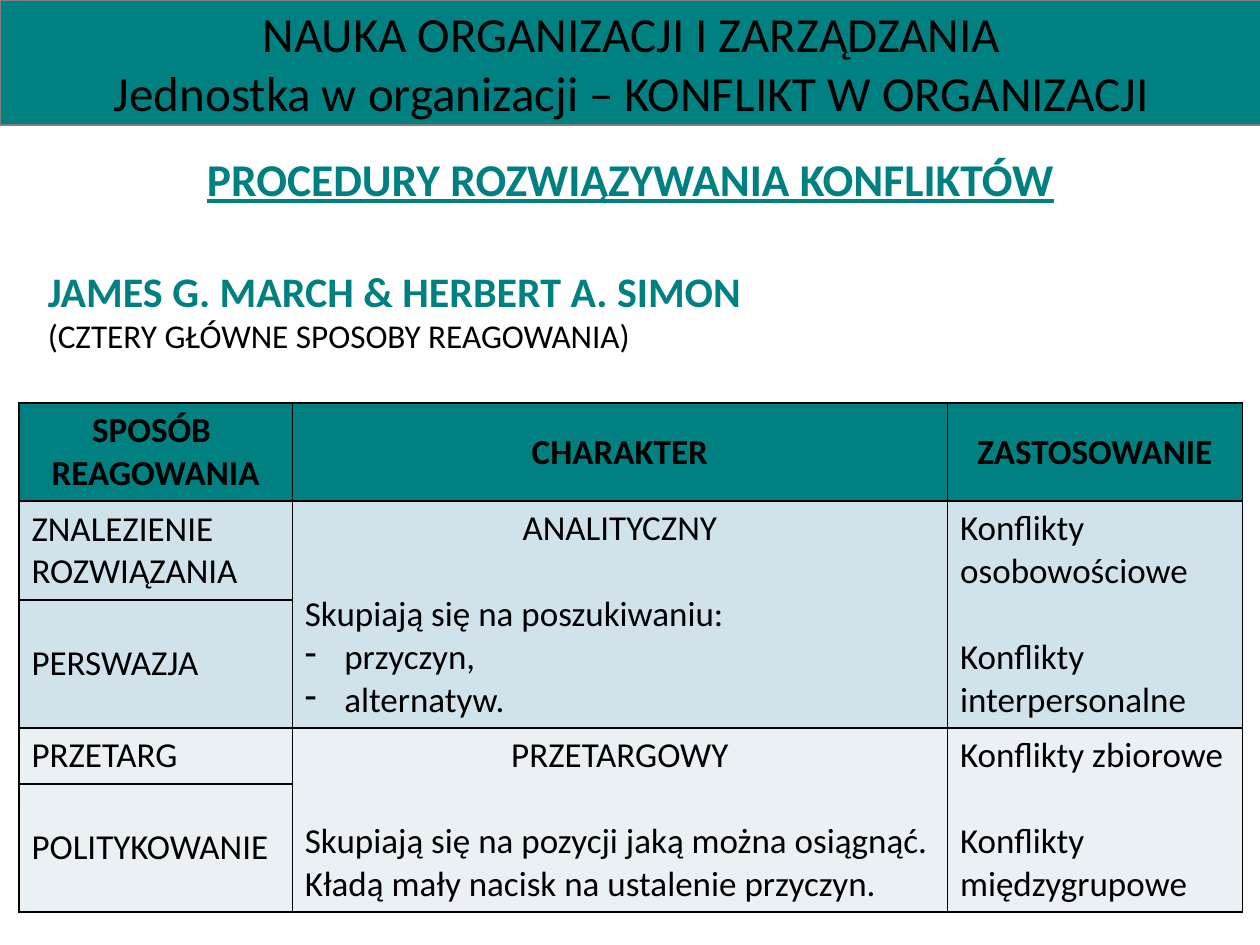
import pptx
import pptx.dml.color
import pptx.enum.shapes
import pptx.enum.text
import pptx.oxml
import pptx.oxml.ns
import pptx.util

Pt = pptx.util.Pt
RGBColor = pptx.dml.color.RGBColor
ALIGN = pptx.enum.text.PP_ALIGN
ANCHOR = pptx.enum.text.MSO_ANCHOR

TEAL = RGBColor(0x00, 0x80, 0x80)
GRAY = RGBColor(0x80, 0x80, 0x80)
BLACK = RGBColor(0x00, 0x00, 0x00)
BLUE_TINT = RGBColor(0xD0, 0xE3, 0xEA)
PALE_TINT = RGBColor(0xE9, 0xF1, 0xF5)

FONT_NAME = "Calibri"
TITLE = {"size": Pt(28)}
HEADING = {"size": Pt(26), "bold": True, "underline": True}
AUTHORS = {"size": Pt(24), "bold": True}
SUBTITLE = {"size": Pt(19)}
TABLE_HEADER = {"size": Pt(20), "bold": True}
TABLE_BODY = {"size": Pt(20), "bold": False}

CENTER = {"alignment": ALIGN.CENTER}
LEFT = {"alignment": ALIGN.LEFT}
LINE_GAP = {"space_after": Pt(24.4)}
CENTER_GAP = {**CENTER, **LINE_GAP}
LEFT_GAP = {**LEFT, **LINE_GAP}

COLUMN_WIDTHS = (156.24, 374.4, 168.48)
ROW_HEIGHTS = (56, 56.4, 73.2, 32, 73.2)


def apply_format(target, values):
    for name, value in values.items():
        setattr(target, name, value)


def write_paragraphs(text_frame, lines, font_format):
    """Write (text, paragraph format) pairs, with an optional own font format."""
    for index, (text, layout, *own_format) in enumerate(lines):
        paragraph = text_frame.paragraphs[0] if index == 0 else text_frame.add_paragraph()
        apply_format(paragraph, layout)
        run = paragraph.add_run()
        run.text = text
        values = {"name": FONT_NAME, **font_format}
        color = BLACK
        if own_format:
            values.update(own_format[0])
            color = own_format[1]
        apply_format(run.font, values)
        run.font.color.rgb = color


def add_title_band(slide):
    shape = slide.shapes.add_shape(
        pptx.enum.shapes.MSO_SHAPE.RECTANGLE, Pt(0), Pt(0), Pt(721.5), Pt(71.5))
    shape.shadow.inherit = False
    shape.fill.solid()
    shape.fill.fore_color.rgb = TEAL
    shape.line.color.rgb = GRAY
    shape.line.width = Pt(0.75)
    apply_format(shape.text_frame, {"word_wrap": True, "vertical_anchor": ANCHOR.MIDDLE})
    write_paragraphs(shape.text_frame, [
        ("NAUKA ORGANIZACJI I ZARZĄDZANIA", CENTER),
        ("Jednostka w organizacji – KONFLIKT W ORGANIZACJI", CENTER),
    ], TITLE)


def add_introduction(slide):
    box = slide.shapes.add_textbox(Pt(20.2), Pt(82.8), Pt(680.4), Pt(130.3))
    box.text_frame.word_wrap = True
    write_paragraphs(box.text_frame, [
        ("PROCEDURY ROZWIĄZYWANIA KONFLIKTÓW", {**CENTER, "space_after": Pt(34)}, HEADING, TEAL),
        ("JAMES G. MARCH & HERBERT A. SIMON", LEFT, AUTHORS, TEAL),
        ("(CZTERY GŁÓWNE SPOSOBY REAGOWANIA)", LEFT),
    ], SUBTITLE)


def set_borders(cell):
    properties = cell._tc.get_or_add_tcPr()
    for index, side in enumerate(("lnL", "lnR", "lnT", "lnB")):
        properties.insert(index, pptx.oxml.parse_xml(
            f'<a:{side} {pptx.oxml.ns.nsdecls("a")} w="{Pt(1)}">'
            f'<a:solidFill><a:srgbClr val="{BLACK}"/></a:solidFill></a:{side}>'))


def add_dash_bullet(paragraph):
    properties = paragraph._p.get_or_add_pPr()
    apply_format_values = {"marL": Pt(22.5), "indent": -Pt(22.5)}
    for name, value in apply_format_values.items():
        properties.set(name, str(value))
    properties.append(pptx.oxml.parse_xml(
        f'<a:buChar {pptx.oxml.ns.nsdecls("a")} char="-"/>'))


def fill_cell(cell, lines, font_format, anchor):
    cell.vertical_anchor = anchor
    write_paragraphs(cell.text_frame, lines, font_format)


def add_reaction_table(slide):
    table = slide.shapes.add_table(
        len(ROW_HEIGHTS), len(COLUMN_WIDTHS), Pt(10.8), Pt(230.4),
        Pt(sum(COLUMN_WIDTHS)), Pt(sum(ROW_HEIGHTS))).table
    apply_format(table, {"first_row": False, "horz_banding": False})
    for column, width in zip(table.columns, COLUMN_WIDTHS):
        column.width = Pt(width)
    row_fills = (TEAL, BLUE_TINT, BLUE_TINT, PALE_TINT, PALE_TINT)
    for row, height, color in zip(table.rows, ROW_HEIGHTS, row_fills):
        row.height = Pt(height)
        for cell in row.cells:
            cell.fill.solid()
            cell.fill.fore_color.rgb = color
            set_borders(cell)

    headers = (("SPOSÓB ", "REAGOWANIA"), ("CHARAKTER",), ("ZASTOSOWANIE",))
    for column, words in enumerate(headers):
        fill_cell(table.cell(0, column), [(word, CENTER) for word in words],
                  TABLE_HEADER, ANCHOR.MIDDLE)

    reactions = ("ZNALEZIENIE ROZWIĄZANIA", "PERSWAZJA", "PRZETARG", "POLITYKOWANIE")
    for row, reaction in enumerate(reactions, start=1):
        fill_cell(table.cell(row, 0), [(reaction, LEFT)], TABLE_BODY, ANCHOR.MIDDLE)

    merged_texts = {
        (1, 1): [("ANALITYCZNY", CENTER_GAP), ("Skupiają się na poszukiwaniu:", LEFT),
                 ("przyczyn,", LEFT), ("alternatyw.", LEFT)],
        (1, 2): [("Konflikty osobowościowe", LEFT_GAP), ("Konflikty interpersonalne", LEFT)],
        (3, 1): [("PRZETARGOWY", CENTER_GAP),
                 ("Skupiają się na pozycji jaką można osiągnąć.", LEFT),
                 ("Kładą mały nacisk na ustalenie przyczyn.", LEFT)],
        (3, 2): [("Konflikty zbiorowe", LEFT_GAP), ("Konflikty międzygrupowe", LEFT)],
    }
    for (row, column), lines in merged_texts.items():
        cell = table.cell(row, column)
        cell.merge(table.cell(row + 1, column))
        fill_cell(cell, lines, TABLE_BODY, ANCHOR.TOP)
    for paragraph in table.cell(1, 1).text_frame.paragraphs[2:]:
        add_dash_bullet(paragraph)


def main():
    presentation = pptx.Presentation()
    apply_format(presentation, {"slide_width": Pt(720), "slide_height": Pt(540)})
    slide = presentation.slides.add_slide(presentation.slide_layouts[6])
    add_introduction(slide)
    add_title_band(slide)
    add_reaction_table(slide)
    presentation.save("out.pptx")


if __name__ == "__main__":
    main()
